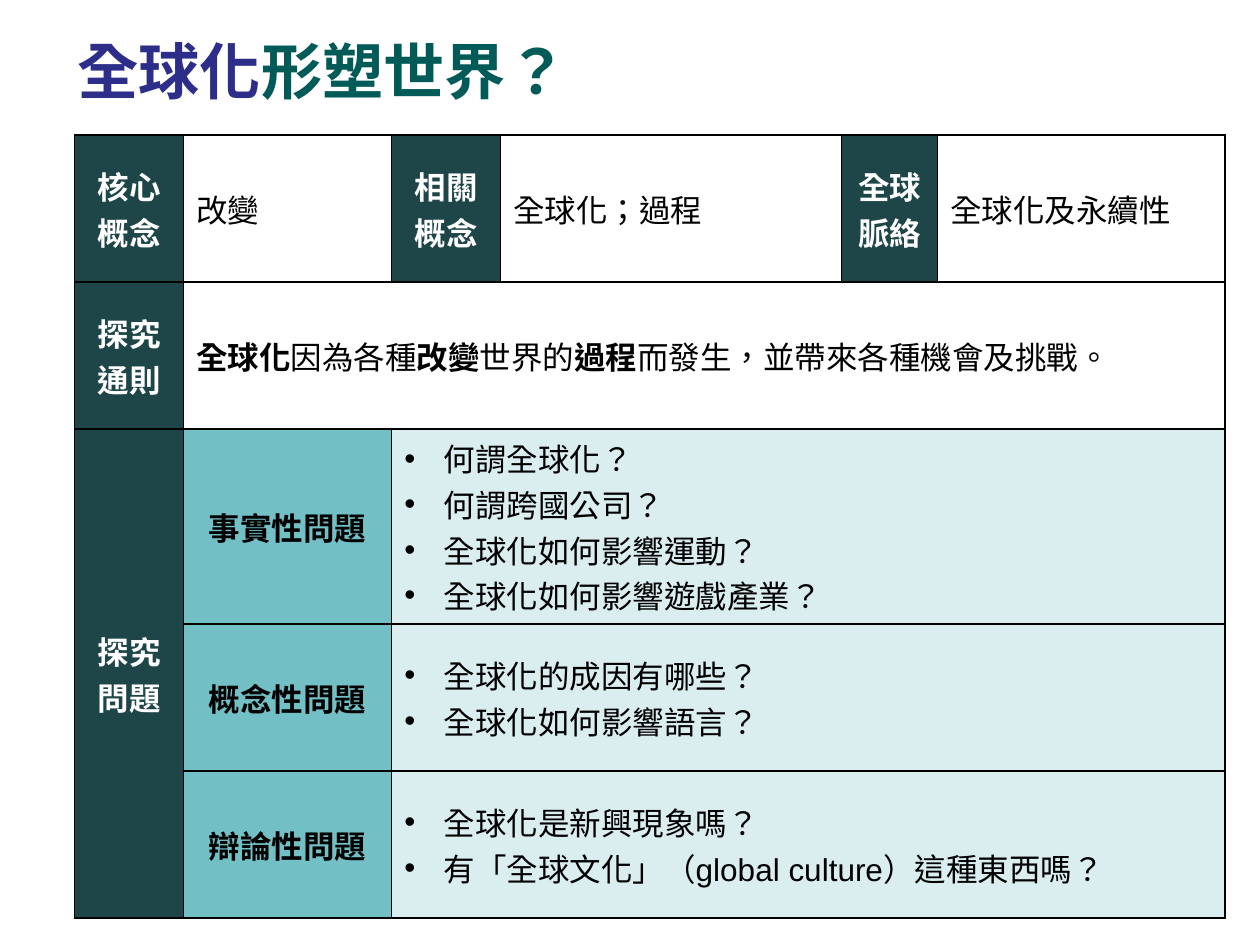
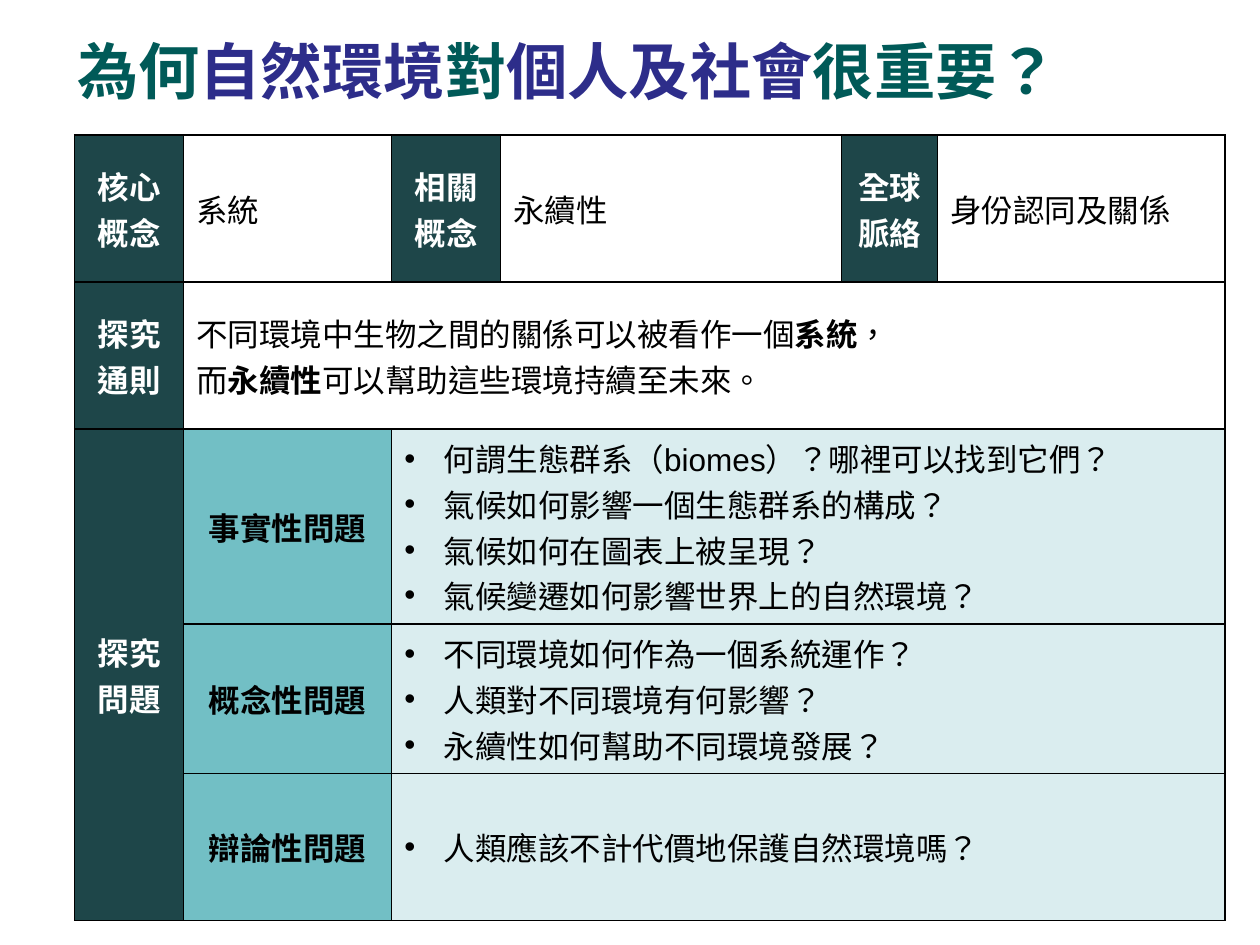
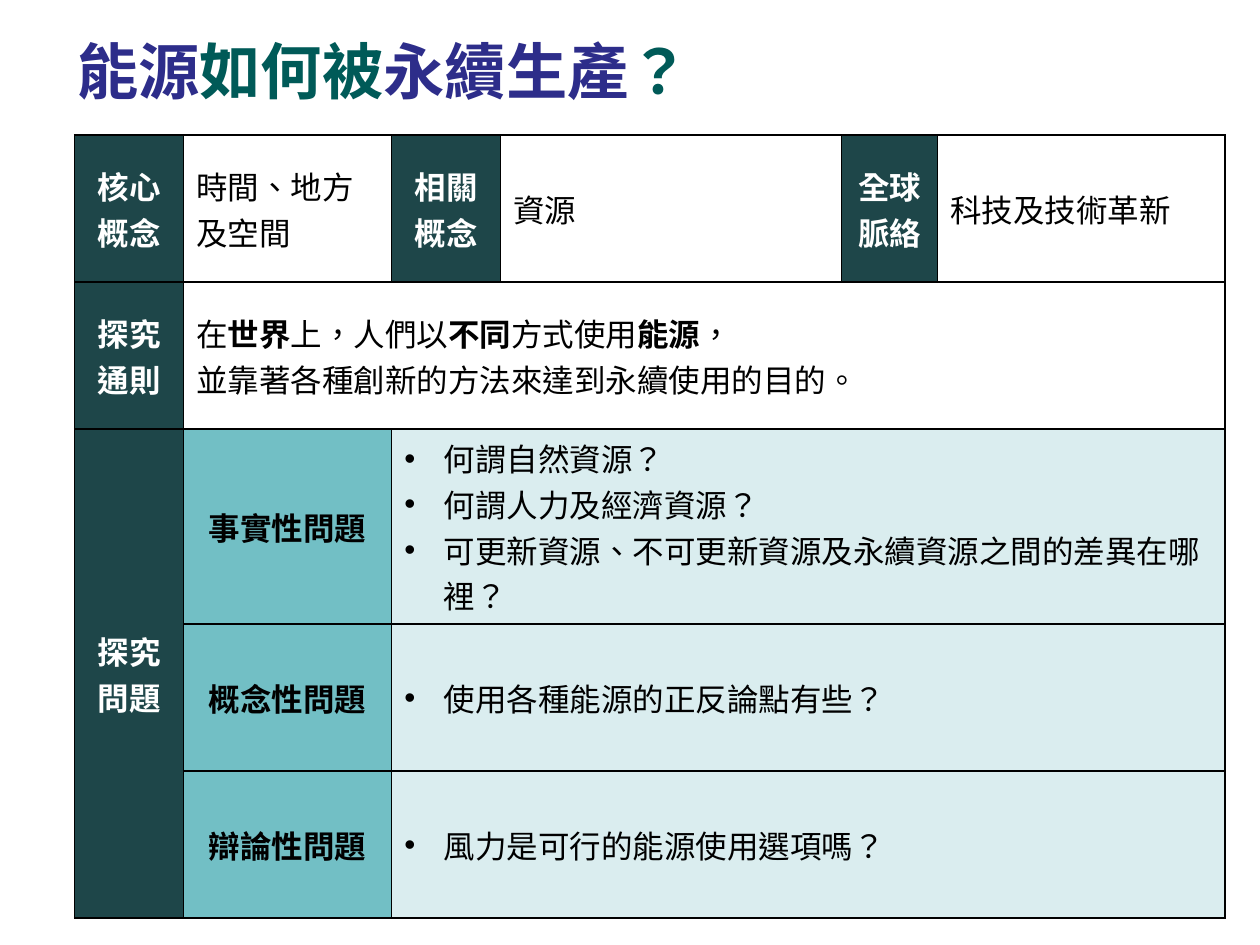
import math

from lxml import etree
from pptx import Presentation
from pptx.dml.color import RGBColor
from pptx.enum import lang, text
from pptx.oxml import ns
from pptx.util import Pt

COLUMNS = [62.3, 118.9, 62.3, 194.8, 54.9, 164.3]
ROW_HEIGHT = 84
LINE_HEIGHT = 26.06
CELL_PADDING = 7.2
QUESTION_CHARS = 24
CONCEPT_LABELS = ["核心概念", "相關概念", "全球脈絡"]
QUESTION_LABELS = ["事實性問題", "概念性問題", "辯論性問題"]

UNITS = [
    {
        "title": "*全球化*形塑世界？",
        "concepts": ["改變", "全球化；過程", "全球化及永續性"],
        "statement": ["*全球化*因為各種*改變*世界的*過程*而發生，並帶來各種機會及挑戰。"],
        "questions": [
            ["何謂全球化？", "何謂跨國公司？", "全球化如何影響運動？",
             "全球化如何影響遊戲產業？"],
            ["全球化的成因有哪些？", "全球化如何影響語言？"],
            ["全球化是新興現象嗎？", "有「全球文化」（global culture）這種東西嗎？"],
        ],
    },
    {
        "title": "為何*自然環境*對*個人及社會*很重要？",
        "concepts": ["系統", "永續性", "身份認同及關係"],
        "statement": ["不同環境中生物之間的關係可以被看作一個*系統*，",
                      "而*永續性*可以幫助這些環境持續至未來。"],
        "questions": [
            ["何謂生態群系（biomes）？哪裡可以找到它們？",
             "氣候如何影響一個生態群系的構成？", "氣候如何在圖表上被呈現？",
             "氣候變遷如何影響世界上的自然環境？"],
            ["不同環境如何作為一個系統運作？", "人類對不同環境有何影響？",
             "永續性如何幫助不同環境發展？"],
            ["人類應該不計代價地保護自然環境嗎？"],
        ],
    },
    {
        "title": "*能源*如何被*永續生產*？",
        "concepts": ["時間、地方及空間", "資源", "科技及技術革新"],
        "statement": ["在*世界*上，人們以*不同*方式使用*能源*，",
                      "並靠著各種創新的方法來達到永續使用的目的。"],
        "questions": [
            ["何謂自然資源？", "何謂人力及經濟資源？",
             "可更新資源、不可更新資源及永續資源之間的差異在哪裡？"],
            ["使用各種能源的正反論點有些？"],
            ["風力是可行的能源使用選項嗎？"],
        ],
    },
]


def color(code):
    """Turn a hex string into a colour."""
    return RGBColor.from_string(code)


def marked(line):
    """Split a line into (words, emphasised) pairs at its asterisks."""
    return [(words, i % 2 == 1) for i, words in enumerate(line.split("*")) if words]


def question_height(questions):
    """Give the row height that holds all wrapped questions."""
    widths = [sum(0.5 if char.isascii() else 1 for char in line) for line in questions]
    lines = sum(math.ceil(width / QUESTION_CHARS) for width in widths)
    return max(ROW_HEIGHT, lines * LINE_HEIGHT + CELL_PADDING)


class UnitDeck:
    """Hold the style of the unit plans and the current slide."""

    FONT = "Arial"
    TITLE, KEYWORD = "005A58", "2D2D8A"
    DARK, MEDIUM, LIGHT = "1E4649", "72BFC5", "DAEDEF"
    WHITE, BLACK = "FFFFFF", "000000"

    def __init__(self):
        """Start an empty presentation."""
        self.deck = Presentation()
        self.deck.slide_width, self.deck.slide_height = Pt(720), Pt(540)

    def new_slide(self):
        """Begin a blank slide."""
        self.slide = self.deck.slides.add_slide(self.deck.slide_layouts[6])

    def run(self, paragraph, words, size, ink, bold):
        """Add one styled run."""
        run = paragraph.add_run()
        run.text = words
        font = run.font
        font.name, font.size, font.bold = self.FONT, Pt(size), bold
        font.language_id = lang.MSO_LANGUAGE_ID.TRADITIONAL_CHINESE
        font.color.rgb = color(ink)

    def title(self, line):
        """Write the title with its key words in blue."""
        frame = self.slide.shapes.add_textbox(Pt(37), Pt(15), Pt(648), Pt(50)).text_frame
        frame.word_wrap = True
        frame.vertical_anchor = text.MSO_ANCHOR.MIDDLE
        for words, key in marked(line):
            self.run(frame.paragraphs[0], words, 35, self.KEYWORD if key else self.TITLE, True)

    def table(self, heights):
        """Add the bordered grid of the unit plan."""
        grid = self.slide.shapes.add_table(
            len(heights), len(COLUMNS), Pt(42.7), Pt(77.2),
            Pt(sum(COLUMNS)), Pt(sum(heights))).table
        grid.first_row = grid.horz_banding = False
        for column, width in zip(grid.columns, COLUMNS):
            column.width = Pt(width)
        for row, height in zip(grid.rows, heights):
            row.height = Pt(height)
        for cell in grid.iter_cells():
            self.border(cell)
            cell.fill.background()
        return grid

    def border(self, cell):
        """Draw a thin black line on each side of a cell."""
        properties = cell._tc.get_or_add_tcPr()
        for side in "LRTB":
            line = etree.SubElement(properties, ns.qn(f"a:ln{side}"), w=str(Pt(1)))
            solid = etree.SubElement(line, ns.qn("a:solidFill"))
            etree.SubElement(solid, ns.qn("a:srgbClr"), val=self.BLACK)

    def bullet(self, paragraph):
        """Give a paragraph a hanging bullet."""
        properties = paragraph._p.get_or_add_pPr()
        properties.set("marL", str(Pt(22.5)))
        properties.set("indent", str(-Pt(22.5)))
        etree.SubElement(properties, ns.qn("a:buFont"), typeface=self.FONT)
        etree.SubElement(properties, ns.qn("a:buChar"), char="•")

    def cell(self, cell, lines, fill=None, ink=BLACK, label=False, bullets=False):
        """Fill a cell with lines, centred and bold for a label."""
        cell.vertical_anchor = text.MSO_ANCHOR.MIDDLE
        if fill:
            cell.fill.solid()
            cell.fill.fore_color.rgb = color(fill)
        frame = cell.text_frame
        for i, line in enumerate(lines):
            paragraph = frame.add_paragraph() if i else frame.paragraphs[0]
            if bullets:
                self.bullet(paragraph)
            if label:
                paragraph.alignment = text.PP_ALIGN.CENTER
            for words, key in marked(line):
                self.run(paragraph, words, 18, ink, label or key)

    def heading(self, cell, label):
        """Fill a dark heading cell."""
        self.cell(cell, [label], self.DARK, self.WHITE, label=True)

    def unit(self, title, concepts, statement, questions):
        """Build the slide of one unit."""
        self.new_slide()
        self.title(title)
        grid = self.table([ROW_HEIGHT] * 2 + [question_height(lines) for lines in questions])
        for i, (label, concept) in enumerate(zip(CONCEPT_LABELS, concepts)):
            self.heading(grid.cell(0, 2 * i), label)
            self.cell(grid.cell(0, 2 * i + 1), [concept])

        grid.cell(1, 1).merge(grid.cell(1, 5))
        self.heading(grid.cell(1, 0), "探究通則")
        self.cell(grid.cell(1, 1), statement)

        grid.cell(2, 0).merge(grid.cell(1 + len(questions), 0))
        self.heading(grid.cell(2, 0), "探究問題")
        for row, (label, lines) in enumerate(zip(QUESTION_LABELS, questions), 2):
            grid.cell(row, 2).merge(grid.cell(row, 5))
            self.cell(grid.cell(row, 1), [label], self.MEDIUM, label=True)
            self.cell(grid.cell(row, 2), lines, self.LIGHT, bullets=True)


def main():
    """Build and save the unit plans."""
    plans = UnitDeck()
    for unit in UNITS:
        plans.unit(**unit)
    plans.deck.save("out.pptx")


if __name__ == "__main__":
    main()
